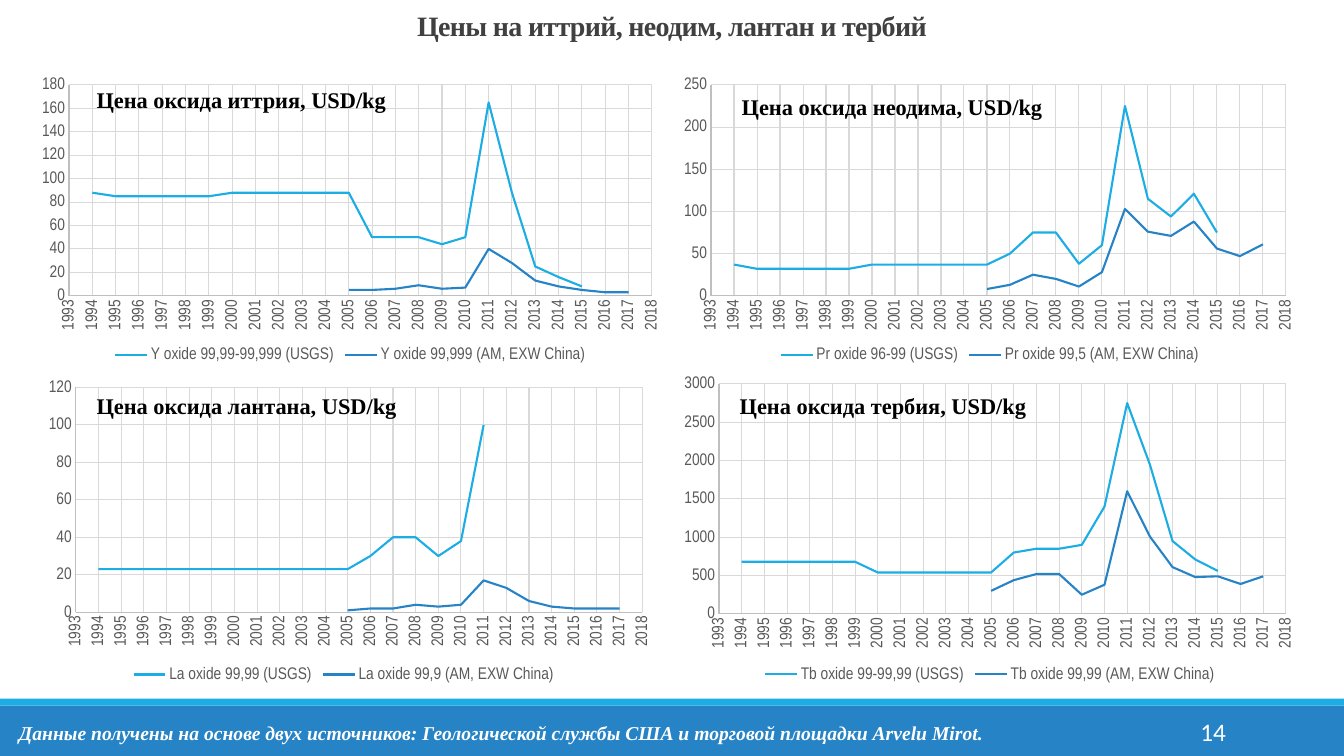
from lxml import etree
from pptx import Presentation
from pptx.chart.data import XyChartData
from pptx.dml.color import RGBColor
from pptx.enum.chart import XL_CHART_TYPE, XL_LEGEND_POSITION, XL_TICK_MARK
from pptx.enum.shapes import MSO_SHAPE
from pptx.enum.text import MSO_ANCHOR, MSO_AUTO_SIZE, PP_ALIGN
from pptx.oxml.ns import qn
from pptx.util import Pt

SCATTER = XL_CHART_TYPE.XY_SCATTER_LINES_NO_MARKERS
LEGEND_BOTTOM = XL_LEGEND_POSITION.BOTTOM
NO_TICK = XL_TICK_MARK.NONE
RECTANGLE = MSO_SHAPE.RECTANGLE
TOP, MIDDLE = MSO_ANCHOR.TOP, MSO_ANCHOR.MIDDLE
LEFT, CENTER, RIGHT = PP_ALIGN.LEFT, PP_ALIGN.CENTER, PP_ALIGN.RIGHT

SKY = RGBColor(0x1C, 0xAD, 0xE4)
BLUE = RGBColor(0x26, 0x83, 0xC6)
WHITE = RGBColor(0xFF, 0xFF, 0xFF)
BLACK = RGBColor(0, 0, 0)
TITLE_GRAY = RGBColor(0x40, 0x40, 0x40)
LABEL_GRAY = RGBColor(0x59, 0x59, 0x59)
AXIS_GRAY = RGBColor(0xBF, 0xBF, 0xBF)
GRID_GRAY = RGBColor(0xD9, 0xD9, 0xD9)

SERIF, NARROW, SANS = "Times New Roman", "Arial Narrow", "Calibri"

TITLE = "Цены на иттрий, неодим, лантан и тербий"
SOURCES = ("Данные получены на основе двух источников: Геологической службы США "
           "и торговой площадки Arvelu Mirot.")
PAGE = "14"
FIRST_YEAR, LAST_YEAR = 1993, 2018
SERIES_START = (1994, 2005)
SERIES_COLORS = (SKY, BLUE)

# Frames and plot areas are left, top, width, height in points on the slide.
PRICES = [
    {
        "heading": "Цена оксида иттрия, USD/kg",
        "heading_box": (61.9, 58.3, 223.9, 26.6),
        "frame": (20.9, 50.4, 458.6, 211.7), "plot": (49.3, 60.7, 416.4, 150.7),
        "top": 180, "step": 20,
        "series": [
            ("Y oxide 99,99-99,999 (USGS)",
             [88, 85, 85, 85, 85, 85, 88, 88, 88, 88, 88, 88, 50, 50, 50, 44, 50,
              165, 88, 25, 16, 8]),
            ("Y oxide 99,999 (AM, EXW China)",
             [5, 5, 6, 9, 6, 7, 40, 28, 13, 8, 5, 3, 3]),
        ],
    },
    {
        "heading": "Цена оксида неодима, USD/kg",
        "heading_box": (521.3, 53.3, 231.8, 36), "align": CENTER, "spacing": 1.5,
        "frame": (480.2, 50.4, 453.6, 211.7), "plot": (507.9, 60.7, 410.7, 150.7),
        "top": 250, "step": 50,
        "series": [
            ("Pr oxide 96-99 (USGS)",
             [37, 32, 32, 32, 32, 32, 37, 37, 37, 37, 37, 37, 50, 75, 75, 38, 60,
              225, 115, 94, 121, 75]),
            ("Pr oxide 99,5 (AM, EXW China)",
             [8, 13, 25, 20, 11, 28, 103, 76, 71, 88, 56, 47, 61]),
        ],
    },
    {
        "heading": "Цена оксида лантана, USD/kg",
        "heading_box": (61.9, 276.5, 231.8, 26.6),
        "frame": (20.9, 270, 449.3, 220.3), "plot": (54.1, 276.8, 404.8, 160.6),
        "top": 120, "step": 20,
        "series": [
            ("La oxide 99,99 (USGS)",
             [23, 23, 23, 23, 23, 23, 23, 23, 23, 23, 23, 23, 30, 40, 40, 30, 38,
              100]),
            ("La oxide 99,9 (AM, EXW China)",
             [1, 2, 2, 4, 3, 4, 17, 13, 6, 3, 2, 2, 2]),
        ],
    },
    {
        "heading": "Цена оксида тербия, USD/kg",
        "heading_box": (521.3, 276.5, 221.8, 26.6),
        "frame": (480.2, 264.2, 453.6, 226.1), "plot": (513.6, 274.3, 405, 164.3),
        "top": 3000, "step": 500,
        "series": [
            ("Tb oxide 99-99,99 (USGS)",
             [680, 680, 680, 680, 680, 680, 540, 540, 540, 540, 540, 540, 800, 850,
              850, 900, 1400, 2750, 1950, 950, 710, 560]),
            ("Tb oxide 99,99 (AM, EXW China)",
             [300, 440, 520, 520, 250, 380, 1600, 1010, 610, 480, 490, 390, 490]),
        ],
    },
]


def points(box):
    return [Pt(length) for length in box]


def set_font(font, size, color, name, bold=False, italic=False):
    font.size, font.name, font.bold, font.italic = Pt(size), name, bold, italic
    font.color.rgb = color


def write(shape, text, size, color, name=SERIF, bold=True, italic=False,
          align=LEFT, spacing=1.0, anchor=TOP, wrap=True, tracking=0):
    frame = shape.text_frame
    frame.word_wrap = wrap
    frame.auto_size = MSO_AUTO_SIZE.NONE
    frame.vertical_anchor = anchor
    paragraph = frame.paragraphs[0]
    paragraph.alignment, paragraph.line_spacing = align, spacing
    run = paragraph.add_run()
    run.text = text
    set_font(run.font, size, color, name, bold, italic)
    if tracking:
        run.font._element.set("spc", str(round(tracking * 100)))


def add_band(slide, box, color):
    band = slide.shapes.add_shape(RECTANGLE, *points(box))
    band.shadow.inherit = False
    band.fill.solid()
    band.fill.fore_color.rgb = color
    band.line.fill.background()


def style_axis(axis, low, high, step):
    axis.minimum_scale, axis.maximum_scale, axis.major_unit = low, high, step
    axis.major_tick_mark = axis.minor_tick_mark = NO_TICK
    axis.has_major_gridlines = True
    for line, color in ((axis.format.line, AXIS_GRAY),
                        (axis.major_gridlines.format.line, GRID_GRAY)):
        line.color.rgb, line.width = color, Pt(0.75)
    labels = axis.tick_labels
    labels.number_format, labels.number_format_is_linked = "General", False
    set_font(labels.font, 12, LABEL_GRAY, NARROW)


def place_plot(chart, frame, plot):
    """Fix the inner plot area as fractions of the chart frame."""
    area = chart._chartSpace.find(".//" + qn("c:plotArea"))
    for old in area.findall(qn("c:layout")):
        area.remove(old)
    layout = etree.Element(qn("c:layout"))
    manual = etree.SubElement(layout, qn("c:manualLayout"))
    settings = {
        "layoutTarget": "inner", "xMode": "edge", "yMode": "edge",
        "x": (plot[0] - frame[0]) / frame[2], "y": (plot[1] - frame[1]) / frame[3],
        "w": plot[2] / frame[2], "h": plot[3] / frame[3],
    }
    for tag, value in settings.items():
        etree.SubElement(manual, qn("c:" + tag)).set("val", str(value))
    area.insert(0, layout)


def add_price_chart(slide, price):
    data = XyChartData()
    for (name, values), start in zip(price["series"], SERIES_START):
        series = data.add_series(name)
        for year, value in enumerate(values, start):
            series.add_data_point(year, value)
    chart = slide.shapes.add_chart(SCATTER, *points(price["frame"]), data).chart
    set_font(chart.font, 12, BLACK, NARROW)
    chart.has_title = False
    chart.has_legend = True
    chart.legend.position = LEGEND_BOTTOM
    chart.legend.include_in_layout = False
    set_font(chart.legend.font, 12, LABEL_GRAY, NARROW)
    chart.plots[0].vary_by_categories = False
    for series, color in zip(chart.plots[0].series, SERIES_COLORS):
        series.smooth = False
        series.format.line.color.rgb, series.format.line.width = color, Pt(1.5)
    years = chart.category_axis
    style_axis(years, FIRST_YEAR, LAST_YEAR, 1)
    style_axis(chart.value_axis, 0, price["top"], price["step"])
    turned = years._element.find(qn("c:txPr")).find(qn("a:bodyPr"))
    turned.set("rot", "-5400000")
    turned.set("vert", "horz")
    place_plot(chart, price["frame"], price["plot"])


def main():
    deck = Presentation()
    deck.slide_width, deck.slide_height = Pt(960), Pt(540)
    slide = deck.slides.add_slide(deck.slide_layouts[5])
    shapes = slide.shapes

    title = shapes.title
    title.left, title.top, title.width, title.height = points((13, 6.5, 933.8, 31.7))
    write(title, TITLE, 20, TITLE_GRAY, align=CENTER, spacing=0.85, tracking=-0.5)

    add_band(slide, (0, 504, 960, 36), BLUE)
    add_band(slide, (0, 499, 960, 5), SKY)
    for price in PRICES:
        add_price_chart(slide, price)
        write(shapes.add_textbox(*points(price["heading_box"])), price["heading"],
              16, BLACK, align=price.get("align", LEFT),
              spacing=price.get("spacing", 1.0), wrap=False)
    write(shapes.add_textbox(*points((6.5, 511.2, 825.1, 24.5))), SOURCES,
          14, WHITE, italic=True)
    write(shapes.add_textbox(*points((779.8, 508.3, 103, 28.8))), PAGE,
          18, WHITE, name=SANS, bold=False, align=RIGHT, anchor=MIDDLE)
    deck.save("out.pptx")


if __name__ == "__main__":
    main()
